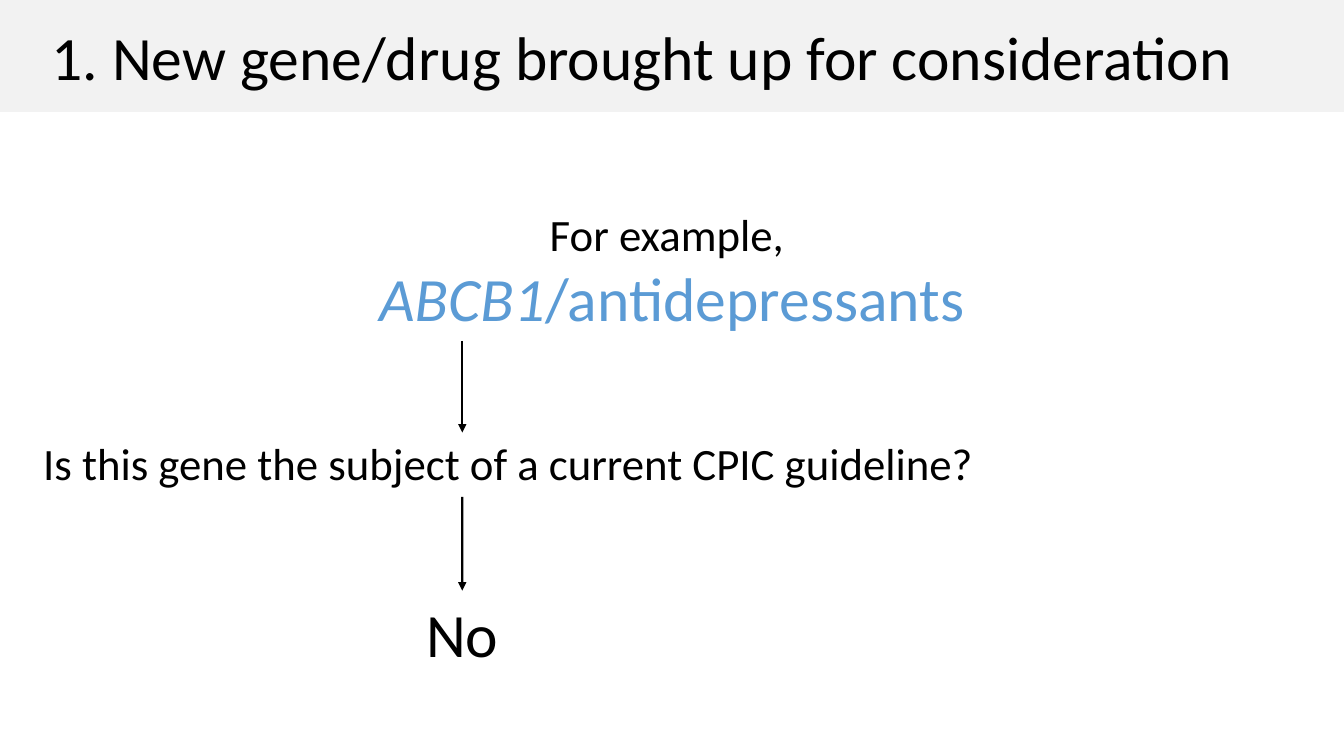
from dataclasses import dataclass
from typing import Any, Optional

from lxml import etree
from pptx import Presentation
from pptx import util as u
from pptx.dml.color import RGBColor
from pptx.enum import shapes, text
from pptx.oxml.ns import qn


@dataclass(frozen=True)
class Theme:
    font: str = "Calibri"
    ink: RGBColor = RGBColor(0, 0, 0)
    accent: RGBColor = RGBColor(0x5B, 0x9B, 0xD5)
    banner: RGBColor = RGBColor(0xF2, 0xF2, 0xF2)
    large: u.Pt = u.Pt(44)
    medium: u.Pt = u.Pt(32)
    arrow: u.Pt = u.Pt(1.5)


THEME = Theme()


@dataclass(frozen=True)
class Span:
    words: str
    size: u.Pt = THEME.medium
    color: RGBColor = THEME.ink
    italic: bool = False


@dataclass(frozen=True)
class Step:
    left: float
    top: float
    width: float
    height: float
    lines: list[list[Span]]


@dataclass(frozen=True)
class Arrow:
    top: float
    bottom: float
    target: Optional[int] = None


SLIDE_WIDTH, SLIDE_HEIGHT = 33.87, 19.05
BANNER_HEIGHT = 2.82
ARROW_X = 11.65

TITLE = Span("1. New gene/drug brought up for consideration", THEME.large)
STEPS = [
    Step(0, 5.08, SLIDE_WIDTH, 3.51, [
        [Span("For example, ")],
        [Span("ABCB1", THEME.large, THEME.accent, True),
         Span("/antidepressants", THEME.large, THEME.accent)],
    ]),
    Step(0.74, 10.85, 24.16, 1.63,
         [[Span("Is this gene the subject of a current CPIC guideline?")]]),
    Step(2.8, 14.88, 17.7, 2.13, [[Span("No", THEME.large)]]),
]
ARROWS = [Arrow(8.59, 10.9), Arrow(12.52, 14.88, target=2)]


def apply_format(target: Any, values: dict[str, Any]) -> None:
    for name, value in values.items():
        setattr(target, name, value)


def add_span(paragraph: Any, span: Span) -> None:
    run = paragraph.add_run()
    run.text = span.words
    apply_format(run.font, {"name": THEME.font, "size": span.size, "italic": span.italic})
    run.font.color.rgb = span.color


def fill_title(slide: Any) -> None:
    title = slide.shapes.title
    apply_format(title, {"left": 0, "top": 0, "width": u.Cm(SLIDE_WIDTH),
                         "height": u.Cm(BANNER_HEIGHT)})
    title.fill.solid()
    title.fill.fore_color.rgb = THEME.banner
    apply_format(title.text_frame, {
        "auto_size": text.MSO_AUTO_SIZE.NONE, "word_wrap": True,
        "vertical_anchor": text.MSO_ANCHOR.MIDDLE, "margin_left": u.Cm(1.3)})
    paragraph = title.text_frame.paragraphs[0]
    paragraph.alignment = text.PP_ALIGN.LEFT
    add_span(paragraph, TITLE)


def add_step(slide: Any, step: Step) -> Any:
    shape = slide.shapes.add_textbox(u.Cm(step.left), u.Cm(step.top),
                                     u.Cm(step.width), u.Cm(step.height))
    frame = shape.text_frame
    apply_format(frame, {"word_wrap": True,
                         "auto_size": text.MSO_AUTO_SIZE.SHAPE_TO_FIT_TEXT})
    for index, spans in enumerate(step.lines):
        paragraph = frame.add_paragraph() if index else frame.paragraphs[0]
        paragraph.alignment = text.PP_ALIGN.CENTER
        for span in spans:
            add_span(paragraph, span)
    return shape


def add_arrow(slide: Any, arrow: Arrow, boxes: list[Any]) -> None:
    connector = slide.shapes.add_connector(
        shapes.MSO_CONNECTOR.STRAIGHT, u.Cm(ARROW_X), u.Cm(arrow.top),
        u.Cm(ARROW_X), u.Cm(arrow.bottom))
    if arrow.target is not None:
        connector.end_connect(boxes[arrow.target], 0)
    connector.line.width = THEME.arrow
    connector.line.color.rgb = THEME.ink
    properties = connector._element.spPr
    etree.SubElement(properties.find(qn("a:ln")), qn("a:tailEnd"), type="triangle")
    etree.SubElement(properties, qn("a:effectLst"))


def main() -> None:
    presentation = Presentation()
    apply_format(presentation, {"slide_width": u.Cm(SLIDE_WIDTH),
                                "slide_height": u.Cm(SLIDE_HEIGHT)})
    slide = presentation.slides.add_slide(presentation.slide_layouts.get_by_name("Title Only"))
    fill_title(slide)
    boxes = [add_step(slide, step) for step in STEPS]
    for arrow in ARROWS:
        add_arrow(slide, arrow, boxes)
    presentation.save("out.pptx")


if __name__ == "__main__":
    main()
